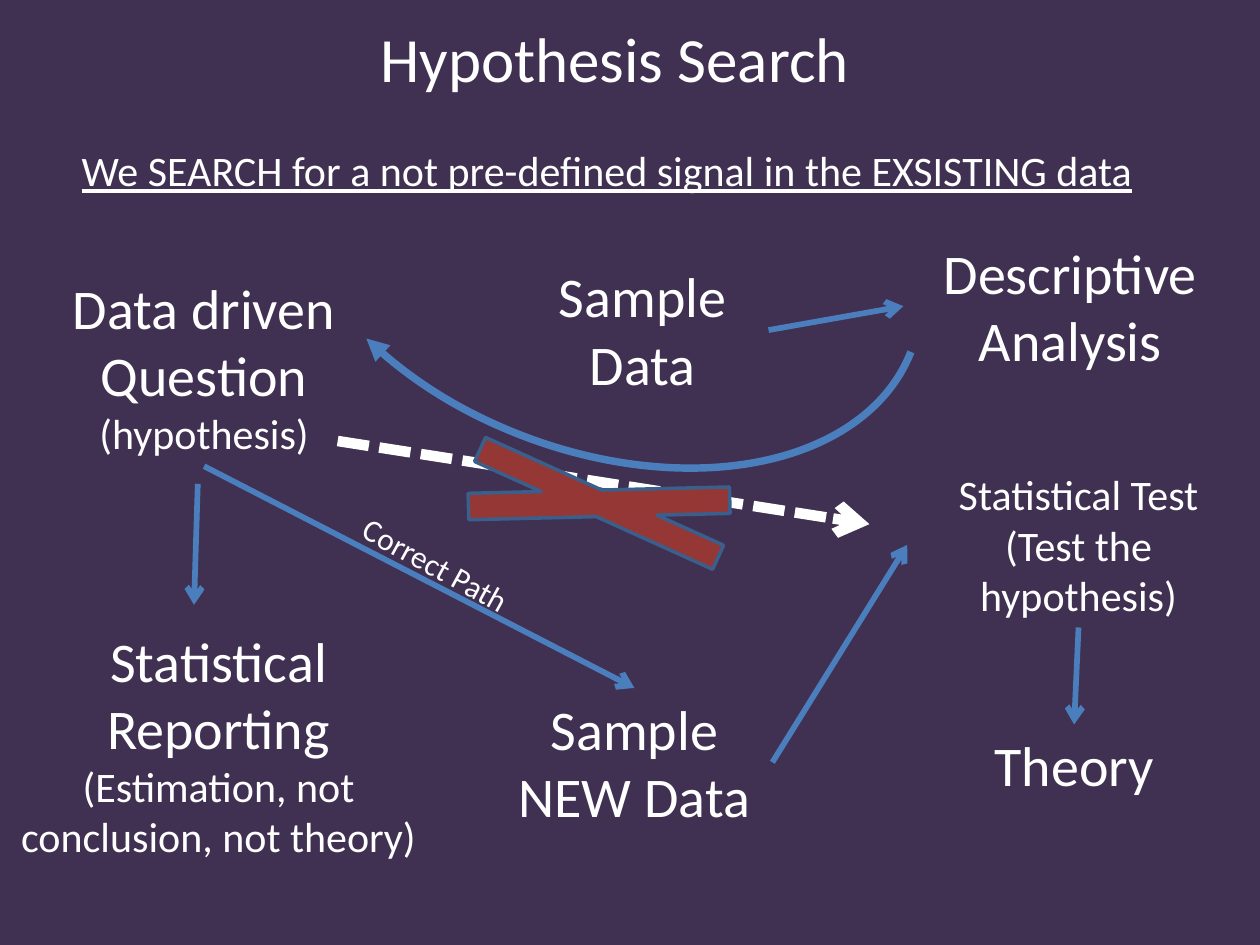
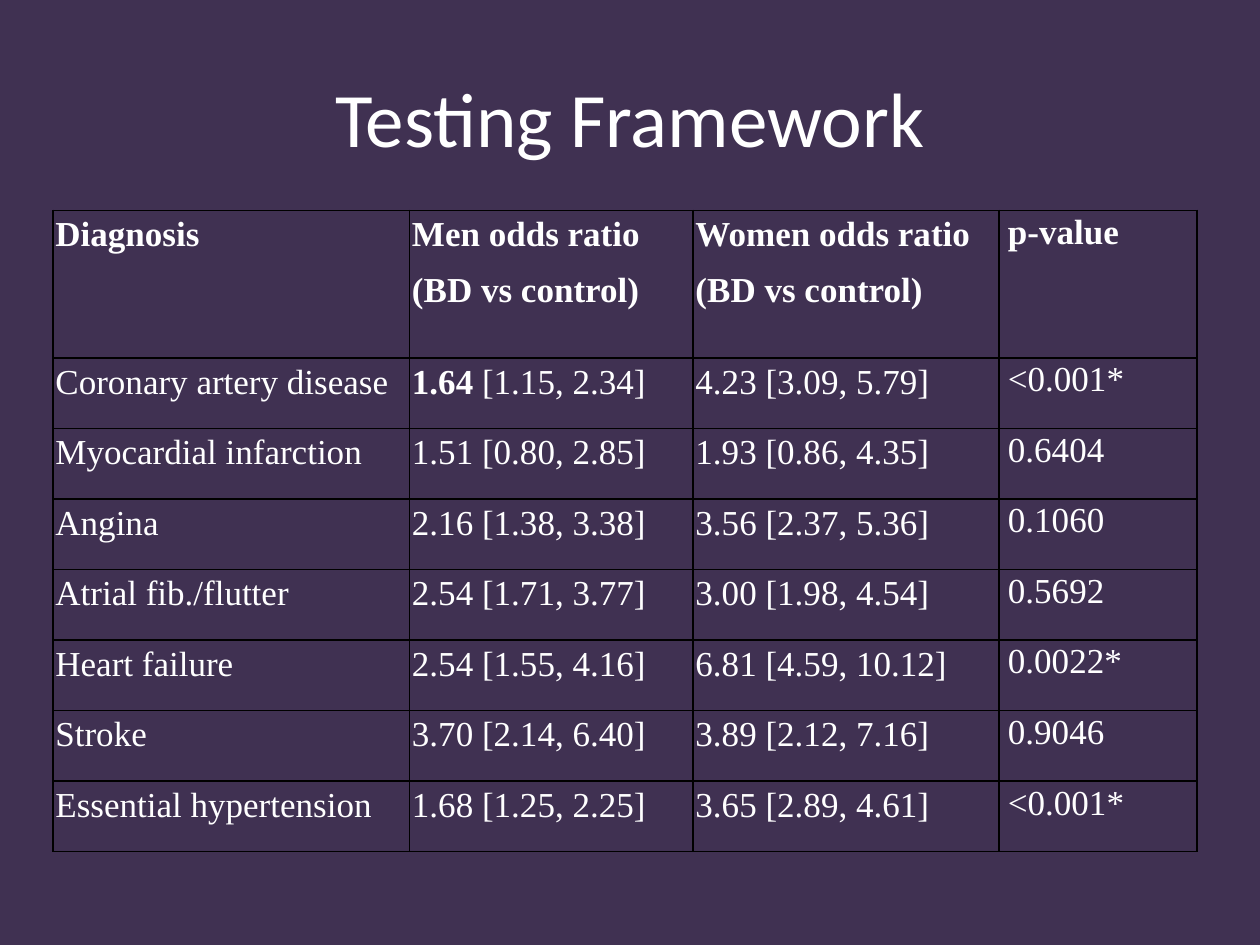
import pptx
import pptx.util
import pptx.dml.color
import pptx.enum.dml
import pptx.enum.shapes
import pptx.enum.text
import pptx.oxml.ns
import lxml.etree

Inches = pptx.util.Inches
Pt = pptx.util.Pt
RGBColor = pptx.dml.color.RGBColor
SHAPE = pptx.enum.shapes.MSO_SHAPE
ANCHOR = pptx.enum.text.MSO_ANCHOR
ALIGN = pptx.enum.text.PP_ALIGN
SQUARE_DASH = pptx.enum.dml.MSO_LINE.SQUARE_DOT
qn = pptx.oxml.ns.qn

PURPLE = RGBColor(0x40, 0x31, 0x52)
WHITE = RGBColor(0xFF, 0xFF, 0xFF)
BLACK = RGBColor(0, 0, 0)
BLUE = RGBColor(0x4B, 0x7E, 0xBC)
DARK_BLUE = RGBColor(0x3A, 0x5F, 0x8C)
RED = RGBColor(0x95, 0x37, 0x35)

BODY_FONT = "Calibri"
TABLE_FONT = "Times New Roman"
TOP, LEFT, BOTTOM, RIGHT = 0, 1, 2, 3

COLUMN_WIDTHS = [2.83, 2.25, 2.43, 1.57]
HEADER_HEIGHT, ROW_HEIGHT = 1.17, 0.56
HEADER = ["Diagnosis", "Men odds ratio\n(BD vs control)",
          "Women odds ratio\n(BD vs control)", "p-value"]
ODDS_RATIOS = [
    ["Coronary artery disease", "1.64 [1.15, 2.34]", "4.23 [3.09, 5.79]", "<0.001*"],
    ["Myocardial infarction", "1.51 [0.80, 2.85]", "1.93 [0.86, 4.35]", "0.6404"],
    ["Angina", "2.16 [1.38, 3.38]", "3.56 [2.37, 5.36]", "0.1060"],
    ["Atrial fib./flutter", "2.54 [1.71, 3.77]", "3.00 [1.98, 4.54]", "0.5692"],
    ["Heart failure", "2.54 [1.55, 4.16]", "6.81 [4.59, 10.12]", "0.0022*"],
    ["Stroke", "3.70 [2.14, 6.40]", "3.89 [2.12, 7.16]", "0.9046"],
    ["Essential hypertension", "1.68 [1.25, 2.25]", "3.65 [2.89, 4.61]", "<0.001*"],
]
HIGHLIGHTED = "1.64"


def apply(target, formats):
    for attribute, value in formats.items():
        setattr(target, attribute, value)


def add_slide(prs):
    slide = prs.slides.add_slide(prs.slide_layouts[6])
    slide.background.fill.solid()
    slide.background.fill.fore_color.rgb = PURPLE
    return slide


def add_run(paragraph, text, size, **formats):
    run = paragraph.add_run()
    run.text = text
    apply(run.font, {"name": BODY_FONT, "size": Pt(size), **formats})
    run.font.color.rgb = WHITE


def add_label(slide, box, *paragraphs, align=ALIGN.CENTER, anchor=ANCHOR.TOP,
              rotation=0, **formats):
    """Add white text; each paragraph is a list of (text, size) runs."""
    label = slide.shapes.add_textbox(*map(Inches, box))
    label.rotation = rotation
    frame = label.text_frame
    apply(frame, {"word_wrap": True, "vertical_anchor": anchor})
    for index, runs in enumerate(paragraphs):
        paragraph = frame.add_paragraph() if index else frame.paragraphs[0]
        paragraph.alignment = align
        for text, size in runs:
            add_run(paragraph, text, size, **formats)
    return label


def add_title(slide, box, text, size, **formats):
    add_label(slide, box, [(text, size)], anchor=ANCHOR.MIDDLE, **formats)


def style_line(shape, color, width, head=None, **formats):
    shape.line.color.rgb = color
    apply(shape.line, {"width": Pt(width), **formats})
    if head:
        lxml.etree.SubElement(shape.element.spPr.ln, qn("a:tailEnd"), type=head)


def add_arrow(slide, start=(0, 0), end=(0, 0), color=BLUE, width=3.25, **formats):
    arrow = slide.shapes.add_connector(
        pptx.enum.shapes.MSO_CONNECTOR.STRAIGHT, *map(Inches, (*start, *end)))
    style_line(arrow, color, width, head="arrow", **formats)
    lxml.etree.SubElement(arrow.element.spPr, qn("a:effectLst"))
    return arrow


def join(slide, source, source_side, target, target_side):
    arrow = add_arrow(slide)
    arrow.begin_connect(source, source_side)
    arrow.end_connect(target, target_side)


def add_rotated_shape(slide, kind, box, rotation):
    shape = slide.shapes.add_shape(kind, *map(Inches, box))
    shape.rotation = rotation
    shape.shadow.inherit = False
    return shape


def add_return_arc(slide):
    """Curve leading from the analysis back to the question."""
    arc = add_rotated_shape(slide, SHAPE.ARC, (3.02, -0.82, 3.48, 5.3), 111.3)
    arc.adjustments[0], arc.adjustments[1] = 162, 26.33
    arc.fill.background()
    style_line(arc, BLUE, 4.25, head="triangle")


def add_forbidden_cross(slide):
    cross = add_rotated_shape(slide, SHAPE.MATH_MULTIPLY, (2.81, 3.55, 3.89, 0.89), 11.5)
    cross.fill.solid()
    cross.fill.fore_color.rgb = RED
    style_line(cross, DARK_BLUE, 2)


def add_borders(cell):
    properties = cell._tc.get_or_add_tcPr()
    for index, side in enumerate(("lnL", "lnR", "lnT", "lnB")):
        border = lxml.etree.Element(qn("a:" + side), w=str(Pt(1)))
        fill = lxml.etree.SubElement(border, qn("a:solidFill"))
        lxml.etree.SubElement(fill, qn("a:srgbClr"), val=str(BLACK))
        properties.insert(index, border)


def fill_cell(cell, text, is_header, is_p_value):
    side, edge = (0.07, 0) if is_p_value else (0.02, 0.02)
    apply(cell, {"margin_left": Inches(side), "margin_right": Inches(side),
                 "margin_top": Inches(edge), "margin_bottom": Inches(edge)})
    cell.fill.background()
    add_borders(cell)
    for index, line in enumerate(text.split("\n")):
        frame = cell.text_frame
        paragraph = frame.add_paragraph() if index else frame.paragraphs[0]
        apply(paragraph, {"line_spacing": 1.07, "space_after": Pt(8)})
        strong = line if is_header else HIGHLIGHTED if line.startswith(HIGHLIGHTED) else ""
        for part, bold in ((strong, True), (line[len(strong):], False)):
            if part:
                add_run(paragraph, part, 20, name=TABLE_FONT, bold=bold)


def add_odds_table(slide):
    rows = [HEADER, *ODDS_RATIOS]
    heights = [HEADER_HEIGHT] + [ROW_HEIGHT] * len(ODDS_RATIOS)
    table = slide.shapes.add_table(
        len(rows), len(HEADER), Inches(0.42), Inches(1.67),
        Inches(sum(COLUMN_WIDTHS)), Inches(sum(heights))).table
    apply(table, {"first_row": False, "horz_banding": False})
    for column, width in zip(table.columns, COLUMN_WIDTHS):
        column.width = Inches(width)
    for r, (texts, height) in enumerate(zip(rows, heights)):
        table.rows[r].height = Inches(height)
        for c, text in enumerate(texts):
            fill_cell(table.cell(r, c), text, r == 0, c == len(HEADER) - 1)


def build_hypothesis_search(prs):
    slide = add_slide(prs)
    add_title(slide, (0.46, 0.01, 8.84, 0.89), "Hypothesis Search", 36)
    add_title(slide, (0.55, 1, 8.84, 0.69),
              "We SEARCH for a not pre-defined signal in the EXSISTING data", 24,
              align=ALIGN.LEFT, underline=True)

    question = add_label(slide, (0.41, 2.12, 2.42, 1.58),
                         [("Data driven Question", 32)], [("(hypothesis)", 24)])
    sample = add_label(slide, (4.1, 2.03, 2, 1.18), [("Sample Data", 32)])
    analysis = add_label(slide, (7.17, 1.84, 2.65, 1.18), [("Descriptive Analysis", 32)])
    test = add_label(slide, (7.2, 3.67, 2.72, 1.31),
                     [("Statistical Test", 24)], [("(Test the hypothesis)", 24)])
    add_label(slide, (0, 4.92, 3.47, 1.99),
              [("Statistical Reporting ", 32),
               ("(Estimation, not conclusion, not theory)", 24)])
    new_sample = add_label(slide, (3.94, 5.46, 2.19, 1.18), [("Sample NEW Data", 32)])
    theory = add_label(slide, (7.43, 5.75, 2.19, 0.64), [("Theory", 32)])

    add_arrow(slide, (2.68, 3.5), (6.9, 4.16), WHITE, 6, dash_style=SQUARE_DASH)
    add_return_arc(slide)
    add_forbidden_cross(slide)
    add_arrow(slide, (1.57, 3.84), (1.54, 4.8))
    join(slide, sample, RIGHT, analysis, LEFT)
    join(slide, question, BOTTOM, new_sample, TOP)
    join(slide, new_sample, RIGHT, test, LEFT)
    join(slide, test, BOTTOM, theory, TOP)
    add_label(slide, (2.7, 4.39, 1.92, 0.4), [("Correct Path", 18)],
              align=ALIGN.LEFT, rotation=28.8)


def build_testing_framework(prs):
    slide = add_slide(prs)
    add_title(slide, (0.5, 0.3, 9, 1.25), "Testing Framework", 44)
    add_odds_table(slide)


def main():
    prs = pptx.Presentation()
    apply(prs, {"slide_width": Inches(10), "slide_height": Inches(7.5)})
    build_hypothesis_search(prs)
    build_testing_framework(prs)
    prs.save("out.pptx")


if __name__ == "__main__":
    main()
